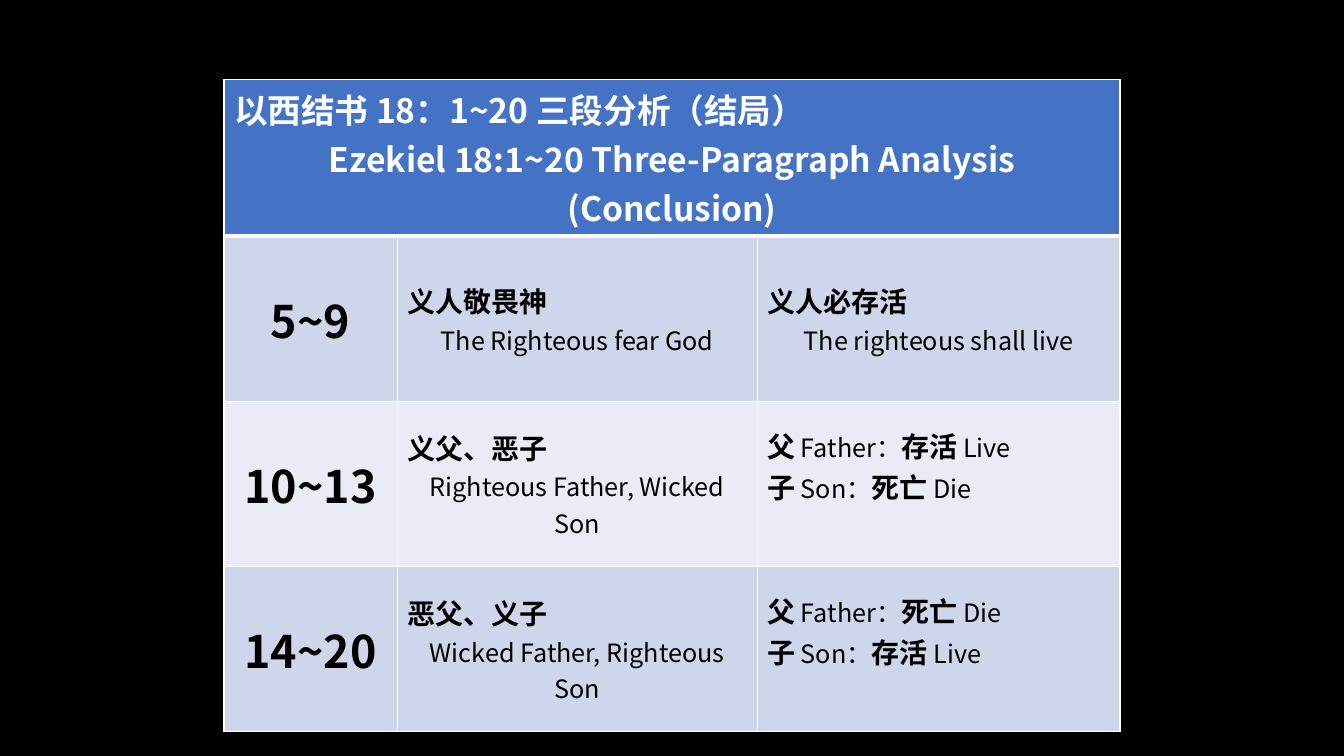
from lxml import etree
from pptx import Presentation
from pptx.dml.color import RGBColor
from pptx.enum.text import MSO_ANCHOR, PP_ALIGN
from pptx.oxml.ns import qn
from pptx.util import Pt

CENTER = PP_ALIGN.CENTER
MIDDLE = MSO_ANCHOR.MIDDLE
FONT = "Noto Sans CJK JP"
COLORS = {"back": "000000", "head": "4472C4", "odd": "CFD5EA",
          "even": "E9EBF5", "line": "FFFFFF", "light": "FFFFFF", "dark": "000000"}
STYLES = {"title": (24, True, "light"), "verse": (32, True, "dark"),
          "zh": (20, True, "dark"), "en": (18, False, "dark")}

TITLE = "以西结书 18：1~20 三段分析（结局）\nEzekiel 18:1~20 Three-Paragraph Analysis (Conclusion)"
LIVE = ("存活", " Live\n")
DIE = ("死亡", " Die\n")
VERSES = [
    ("5~9", ("义人敬畏神\n", "The Righteous fear God"),
     ("义人必存活\n", "The righteous shall live")),
    ("10~13", ("义父、恶子\n", "Righteous Father, Wicked Son"),
     ("父", " Father：", *LIVE, "子", " Son：", *DIE)),
    ("14~20", ("恶父、义子\n", "Wicked Father, Righteous Son"),
     ("父", " Father：", *DIE, "子", " Son：", *LIVE)),
]

SLIDE = (960, 540)
LEFT, TOP = 160, 57
WIDTHS = (123.84, 257.04, 259.2)
HEAD, ROW = 82, 118
THIN, THICK = 1, 3


def color(name):
    """Return the named colour."""
    return RGBColor.from_string(COLORS[name])


def write(cell, parts):
    """Fill a cell with (text, style) runs in one centred paragraph."""
    cell.vertical_anchor = MIDDLE
    para = cell.text_frame.paragraphs[0]
    para.alignment = CENTER
    for text, style in parts:
        size, bold, ink = STYLES[style]
        run = para.add_run()
        run.text = text
        run.font.size, run.font.bold, run.font.name = Pt(size), bold, FONT
        run.font.color.rgb = color(ink)
        latin = run._r.rPr.find(qn("a:latin"))
        east = etree.Element(qn("a:ea"), typeface=FONT)
        latin.addnext(east)


def paint(cell, fill, top, bottom):
    """Set the fill and the four borders of a cell."""
    cell.fill.solid()
    cell.fill.fore_color.rgb = color(fill)
    props = cell._tc.get_or_add_tcPr()
    sides = (("L", THIN), ("R", THIN), ("T", top), ("B", bottom))
    for spot, (side, width) in enumerate(sides):
        line = etree.Element(qn("a:ln" + side), w=str(Pt(width)))
        solid = etree.SubElement(line, qn("a:solidFill"))
        etree.SubElement(solid, qn("a:srgbClr"), val=COLORS["line"])
        props.insert(spot, line)


def main():
    """Build the slide and save it."""
    deck = Presentation()
    deck.slide_width, deck.slide_height = map(Pt, SLIDE)
    slide = deck.slides.add_slide(deck.slide_layouts[6])
    slide.background.fill.solid()
    slide.background.fill.fore_color.rgb = color("back")

    count = len(VERSES)
    frame = slide.shapes.add_table(count + 1, len(WIDTHS), Pt(LEFT), Pt(TOP),
                                   Pt(sum(WIDTHS)), Pt(HEAD + count * ROW))
    table = frame.table
    for col, width in zip(table.columns, WIDTHS):
        col.width = Pt(width)
    for index, row in enumerate(table.rows):
        row.height = Pt(ROW if index else HEAD)
        fill = ("odd" if index % 2 else "even") if index else "head"
        for cell in row.cells:
            paint(cell, fill, THICK if index == 1 else THIN, THIN if index else THICK)

    table.cell(0, 0).merge(table.cell(0, len(WIDTHS) - 1))
    write(table.cell(0, 0), [(TITLE, "title")])
    for index, (verse, *pairs) in enumerate(VERSES, 1):
        write(table.cell(index, 0), [(verse, "verse")])
        for col, texts in enumerate(pairs, 1):
            write(table.cell(index, col),
                  [(text, "en" if spot % 2 else "zh") for spot, text in enumerate(texts)])
    deck.save("out.pptx")


if __name__ == "__main__":
    main()
